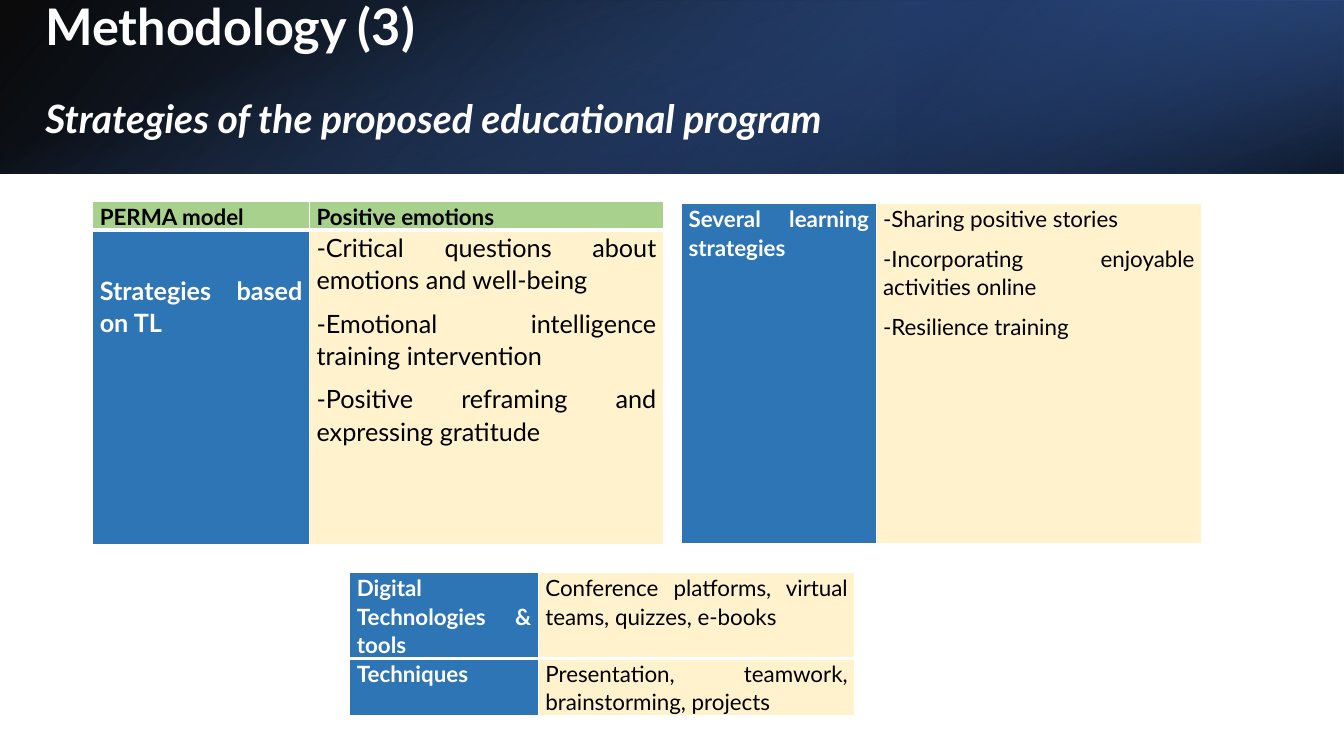
"""Build the slide on the strategies of the educational program."""
import dataclasses
import typing

import lxml.etree
import pptx
import pptx.dml.color
import pptx.enum.shapes
import pptx.enum.text
import pptx.oxml
import pptx.oxml.ns
import pptx.util

Inches = pptx.util.Inches
Pt = pptx.util.Pt
Align = pptx.enum.text.PP_ALIGN
qn = pptx.oxml.ns.qn
FONT = "Lato"
COLORS = {
    "white": "FFFFFF", "black": "000000", "blue": "2E75B6", "green": "A9D18E",
    "cream": "FFF2CC", "navy": "203864", "deep": "2F5597", "sky": "4472C4",
}


class Stop(typing.NamedTuple):
    """One gradient stop, with place and opacity in percent."""
    pos: int
    color: str
    alpha: int


@dataclasses.dataclass
class Band:
    """A gradient band of the header."""
    box: tuple[float, float, float, float]
    angle: int
    stops: list[Stop]
    turn: int = 0
    flip: bool = False


@dataclasses.dataclass
class Cell:
    """A table cell with its paragraphs."""
    lines: list[str]
    fill: str
    size: int = 16
    bold: bool = False
    ink: str = "black"
    top: float = 0


@dataclasses.dataclass
class Grid:
    """A table with its sizes and cells."""
    left: float
    top: float
    cols: list[float]
    rows: list[float]
    cells: list[list[Cell]]


def label(text: str, size: int = 16, top: float = 0) -> Cell:
    """Return a blue heading cell."""
    return Cell([text], "blue", size, True, "white", top)


def body(*lines: str, size: int = 16) -> Cell:
    """Return a cream body cell."""
    return Cell(list(lines), "cream", size)


BANDS = [
    Band((0, 0, 13.33, 1.72), 140, [Stop(0, "black", 96), Stop(100, "deep", 100)], flip=True),
    Band((8.89, 0, 4.44, 1.72), 320, [Stop(19, "navy", 68), Stop(100, "sky", 79)], 180, True),
    Band((5.8, -5.8, 1.72, 13.33), 340, [Stop(23, "sky", 0), Stop(99, "black", 74)], 90),
]
GRIDS = [
    Grid(0.92, 2, [2.15, 3.51], [0.27, 3.12], [
        [Cell(["PERMA model"], "green", bold=True),
         Cell(["Positive emotions"], "green", bold=True)],
        [label("Strategies based on TL", 18, 0.43),
         body("-Critical questions about emotions and well-being",
              "-Emotional intelligence training intervention",
              "-Positive reframing and expressing gratitude", size=18)],
    ]),
    Grid(6.76, 2.02, [1.93, 3.23], [3.39], [
        [label("Several learning strategies"),
         body("-Sharing positive stories",
              "-Incorporating enjoyable activities online",
              "-Resilience training")],
    ]),
    Grid(3.47, 5.68, [1.87, 3.14], [0.85, 0.56], [
        [label("Digital Technologies & tools"),
         body("Conference platforms, virtual teams, quizzes, e-books")],
        [label("Techniques"),
         body("Presentation, teamwork, brainstorming, projects")],
    ]),
]


def rgb(name: str) -> pptx.dml.color.RGBColor:
    """Return a named color."""
    return pptx.dml.color.RGBColor.from_string(COLORS[name])


def style(para, size: float, ink: str, bold: bool, slant: bool = False) -> None:
    """Format the runs of a paragraph."""
    for run in para.runs:
        font = run.font
        font.name, font.size = FONT, Pt(size)
        font.bold, font.italic = bold, slant
        font.color.rgb = rgb(ink)


def solid(parent, name: str, alpha: int = 100) -> None:
    """Add a color element to an XML parent."""
    color = lxml.etree.SubElement(parent, qn("a:srgbClr"), val=COLORS[name])
    if alpha < 100:
        lxml.etree.SubElement(color, qn("a:alpha"), val=str(alpha * 1000))


def draw_band(slide, band: Band) -> None:
    """Draw one gradient band."""
    kind = pptx.enum.shapes.MSO_SHAPE.RECTANGLE
    shape = slide.shapes.add_shape(kind, *map(Inches, band.box))
    shape.shadow.inherit = False
    shape.line.fill.background()
    shape.rotation = band.turn
    if band.flip:
        shape.element.spPr.find(qn("a:xfrm")).set("flipH", "1")
    shape.fill.gradient()
    grad = shape.element.spPr.find(qn("a:gradFill"))
    for child in list(grad):
        grad.remove(child)
    stops = lxml.etree.SubElement(grad, qn("a:gsLst"))
    for stop in band.stops:
        node = lxml.etree.SubElement(stops, qn("a:gs"), pos=str(stop.pos * 1000))
        solid(node, stop.color, stop.alpha)
    lxml.etree.SubElement(grad, qn("a:lin"), ang=str(band.angle * 60000), scaled="0")


def draw_title(slide) -> None:
    """Place and format the two-line title."""
    title = slide.shapes.title
    title.element.getparent().append(title.element)
    title.left, title.top, title.width, title.height = map(Inches, (0.35, 0, 10.98, 1.72))
    frame = title.text_frame
    frame.text = "Methodology (3)\nStrategies of the\u00a0proposed educational program".replace("\u00a0", " ")
    frame.word_wrap = True
    frame.auto_size = pptx.enum.text.MSO_AUTO_SIZE.NONE
    frame.vertical_anchor = pptx.enum.text.MSO_ANCHOR.TOP
    frame.margin_top = Inches(0.02)
    for para, size, slant in zip(frame.paragraphs, (36, 27.9), (False, True)):
        para.alignment, para.line_spacing = Align.LEFT, 0.9
        para.space_before = Pt(31 if slant else 0)
        style(para, size, "white", True, slant)


def draw_cell(cell, data: Cell, first: bool, last: bool) -> None:
    """Fill one table cell and set its borders."""
    props = cell._tc.get_or_add_tcPr()
    widths = {"L": 1, "R": 1, "T": 1 if first else 3, "B": 3 if first or not last else 1}
    for side, width in widths.items():
        line = lxml.etree.SubElement(props, qn(f"a:ln{side}"), w=str(Pt(width)))
        solid(lxml.etree.SubElement(line, qn("a:solidFill")), "white")
    cell.fill.solid()
    cell.fill.fore_color.rgb = rgb(data.fill)
    cell.margin_left = cell.margin_right = Inches(0.07)
    cell.margin_top, cell.margin_bottom = Inches(data.top), 0
    cell.text_frame.text = "\n".join(data.lines)
    for para in cell.text_frame.paragraphs:
        para.alignment, para.line_spacing = Align.JUSTIFY, 1.07
        para.space_after = Pt(8)
        style(para, data.size, data.ink, data.bold)


def draw_grid(slide, grid: Grid) -> None:
    """Draw one table."""
    box = (grid.left, grid.top, sum(grid.cols), sum(grid.rows))
    table = slide.shapes.add_table(len(grid.rows), len(grid.cols), *map(Inches, box)).table
    table.first_row = table.horz_banding = False
    for col, width in zip(table.columns, grid.cols):
        col.width = Inches(width)
    for i, (row, height) in enumerate(zip(table.rows, grid.rows)):
        row.height = Inches(height)
        for cell, data in zip(row.cells, grid.cells[i]):
            draw_cell(cell, data, i == 0, i == len(grid.rows) - 1)


def main() -> None:
    """Build and save the deck."""
    deck = pptx.Presentation()
    deck.slide_width, deck.slide_height = Inches(13.33), Inches(7.5)
    slide = deck.slides.add_slide(deck.slide_layouts[5])
    for band in BANDS:
        draw_band(slide, band)
    draw_title(slide)
    for grid in GRIDS:
        draw_grid(slide, grid)
    deck.save("out.pptx")


if __name__ == "__main__":
    main()
